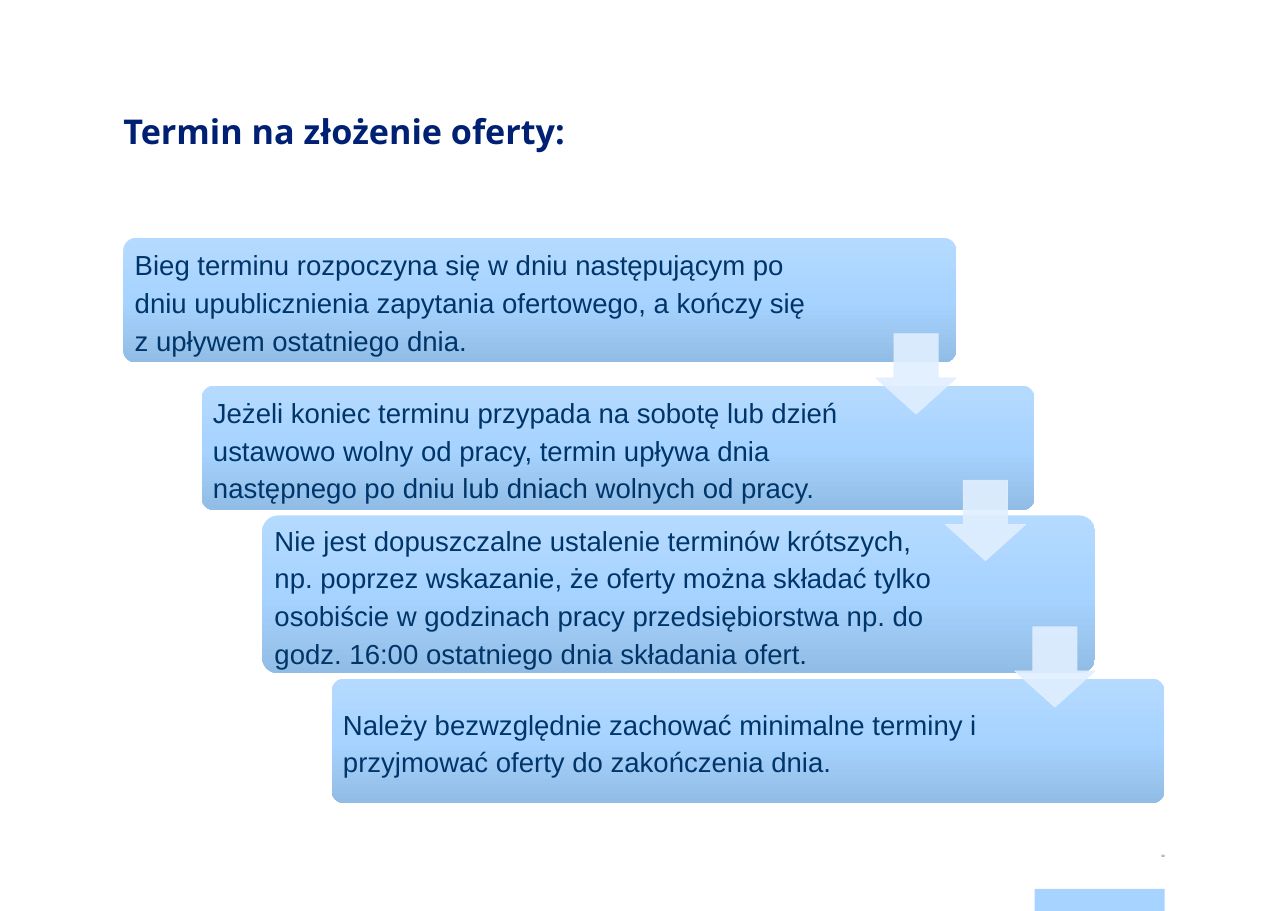
from copy import deepcopy

from lxml.etree import SubElement
from pptx import Presentation
from pptx.dml.color import RGBColor
from pptx.enum.shapes import MSO_SHAPE
from pptx.enum.text import MSO_ANCHOR, PP_ALIGN
from pptx.oxml.ns import qn
from pptx.util import Inches, Pt

COLORS = {
    "navy": "002073",
    "step_text": "003569",
    "step_top": "B5DAFF",
    "accent": "A6D3FF",
    "step_bottom": "91BCE5",
    "arrow": "E1EFFF",
}

STEP_WIDTH = 7.56
ARROW_SIZE = 0.73

# Left, top, height and wording of each step
STEPS = [
    (1.12, 2.16, 1.13, "Bieg terminu rozpoczyna się w dniu następującym po dniu "
     "upublicznienia zapytania ofertowego, a kończy się z upływem ostatniego dnia."),
    (1.83, 3.5, 1.13, "Jeżeli koniec terminu przypada na sobotę lub dzień ustawowo "
     "wolny od pracy, termin upływa dnia następnego po dniu lub dniach wolnych od pracy."),
    (2.38, 4.68, 1.43, "Nie jest dopuszczalne ustalenie terminów krótszych, np. poprzez "
     "wskazanie, że oferty można składać tylko osobiście w godzinach pracy "
     "przedsiębiorstwa np. do godz. 16:00 ostatniego dnia składania ofert."),
    (3.01, 6.16, 1.13, "Należy bezwzględnie zachować minimalne terminy "
     "i przyjmować oferty do zakończenia dnia."),
]


def rgb(name):
    return RGBColor.from_string(COLORS[name])


def add_block(slide, preset, box):
    block = slide.shapes.add_shape(preset, *map(Inches, box))
    block.shadow.inherit = False
    block.line.fill.background()
    return block


def write(shape, text, insets, size, font, color, anchor=MSO_ANCHOR.MIDDLE):
    """Fill the shape with one paragraph; insets are left, top, right, bottom."""
    frame = shape.text_frame
    frame.word_wrap = True
    frame.vertical_anchor = anchor
    (frame.margin_left, frame.margin_top,
     frame.margin_right, frame.margin_bottom) = map(Inches, insets)
    paragraph = frame.paragraphs[0]
    paragraph.text = text
    paragraph.alignment = PP_ALIGN.LEFT
    paragraph.font.size = Pt(size)
    paragraph.font.name = font
    paragraph.font.color.rgb = rgb(color)
    return paragraph


def add_title(slide, box):
    title = slide.shapes.add_textbox(*map(Inches, box))
    heading = write(title, "Termin na złożenie oferty:", (0, 0, 0, 0),
                    22.3, "Open Sans", "navy", MSO_ANCHOR.TOP)
    heading.font.bold = True
    heading.line_spacing = Pt(28.6)


def add_step(slide, box, text):
    step = add_block(slide, MSO_SHAPE.ROUNDED_RECTANGLE, box)
    step.adjustments[0] = 0.1
    # Three-stop gradient running from top to bottom
    step.fill.gradient()
    step.fill.gradient_angle = 270
    stop_list = step.fill._fill._gradFill.find(qn("a:gsLst"))
    stop_list.insert(1, deepcopy(stop_list[0]))
    shades = ("step_top", "accent", "step_bottom")
    for stop, position, shade in zip(step.fill.gradient_stops, (0, 0.5, 1), shades):
        stop.position = position
        stop.color.rgb = rgb(shade)
    # The wide right inset keeps the words clear of the arrows
    wording = write(step, text, (0.07, 0.07, 1.32, 0.07), 18, "Arial", "step_text")
    wording.line_spacing = 1.14


def add_arrow(slide, box):
    arrow = add_block(slide, MSO_SHAPE.DOWN_ARROW, box)
    arrow.adjustments[0] = 0.55
    arrow.adjustments[1] = 0.45
    arrow.line.width = Pt(0.5)
    for paint in (arrow.fill, arrow.line.fill):
        paint.solid()
        paint.fore_color.rgb = rgb("arrow")
    for color in arrow._element.spPr.iter(qn("a:srgbClr")):
        SubElement(color, qn("a:alpha"), val="90000")


def add_staircase(slide):
    for left, top, height, text in STEPS:
        add_step(slide, (left, top, STEP_WIDTH, height), text)
    for i in range(len(STEPS) - 1):
        add_arrow(slide, (7.95 + 0.63 * i, 3.03 + 1.33 * i, ARROW_SIZE, ARROW_SIZE))


def add_footer(slide, left, top, width):
    # Page number
    number_box = slide.shapes.add_textbox(*map(Inches, (left, top, width, 0.2)))
    number = write(number_box, "30", (0, 0.08, 0, 0.08), 2, "Open Sans", "navy")
    number.alignment = PP_ALIGN.RIGHT
    number.line_spacing = 0.9
    # Accent bar at the page edge
    bar = add_block(slide, MSO_SHAPE.RECTANGLE, (left, top + 0.39, width, 0.2))
    bar.fill.solid()
    bar.fill.fore_color.rgb = rgb("accent")


def main():
    deck = Presentation()
    deck.slide_width = Inches(11.69)
    deck.slide_height = Inches(8.27)
    slide = deck.slides.add_slide(deck.slide_layouts[6])
    add_title(slide, (1.12, 0.98, 9.45, 1.18))
    add_staircase(slide)
    add_footer(slide, 9.39, 7.68, 1.18)
    deck.save("out.pptx")


if __name__ == "__main__":
    main()
